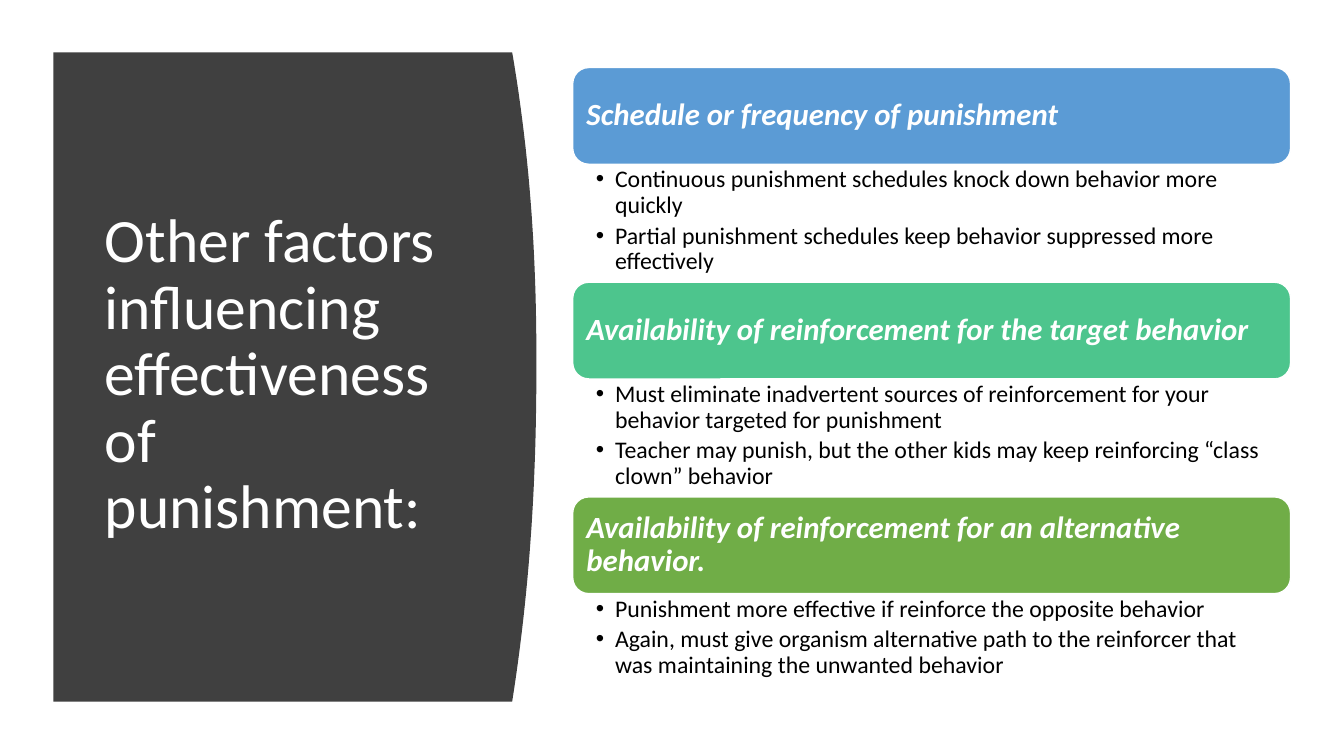
from pptx import Presentation
from pptx.dml.color import RGBColor
from pptx.enum.shapes import MSO_SHAPE as Shape
from pptx.enum.text import MSO_ANCHOR as Anchor, PP_ALIGN as Align
from pptx.oxml.ns import qn
from pptx.util import Inches, Pt
from lxml.etree import SubElement

TITLE = "Other factors influencing effectiveness of punishment:"
FACTORS = [
    ("Schedule or frequency of punishment", "5B9BD5", 1.17, [
        "Continuous punishment schedules knock down behavior more quickly",
        "Partial punishment schedules keep behavior suppressed more effectively",
    ]),
    ("Availability of reinforcement for the target behavior", "4DC58D", 1.17, [
        "Must eliminate inadvertent sources of reinforcement for your behavior targeted for punishment",
        "Teacher may punish, but the other kids may keep reinforcing “class clown” behavior",
    ]),
    ("Availability of reinforcement for an alternative behavior.", "70AD47", 0.92, [
        "Punishment more effective if reinforce the opposite behavior",
        "Again, must give organism alternative path to the reinforcer that was maintaining the unwanted behavior",
    ]),
]
FACTOR_LEFT, FACTOR_TOP, FACTOR_WIDTH, HEADING_HEIGHT = 5.68, 0.67, 7.12, 0.96
PANEL_LEFT, PANEL_TOP, PANEL_RIGHT, PANEL_BOTTOM = 0.53, 0.52, 5.08, 6.96
BULGE, APEX, CURVE_STEPS = 0.24, 3.6, 48


def color(hex_code):
    return RGBColor.from_string(hex_code)


def set_frame(frame, anchor, insets):
    frame.word_wrap = True
    frame.vertical_anchor = anchor
    (frame.margin_left, frame.margin_top,
     frame.margin_right, frame.margin_bottom) = map(Inches, insets)


def write(paragraph, text, size, hex_code, strong=False):
    paragraph.alignment = Align.LEFT
    paragraph.line_spacing = 0.9
    run = paragraph.add_run()
    run.text = text
    run.font.name = "Calibri"
    run.font.size = Pt(size)
    run.font.bold = run.font.italic = strong
    run.font.color.rgb = color(hex_code)


def add_bullet(paragraph):
    props = paragraph._p.get_or_add_pPr()
    props.set("marL", str(Inches(0.19)))
    props.set("indent", str(Inches(-0.19)))
    SubElement(props, qn("a:buFont")).set("typeface", "Arial")
    SubElement(props, qn("a:buChar")).set("char", "•")


def curve_point(step):
    y = PANEL_TOP + (PANEL_BOTTOM - PANEL_TOP) * step / CURVE_STEPS
    reach = APEX - PANEL_TOP if y < APEX else PANEL_BOTTOM - APEX
    return PANEL_RIGHT + BULGE * (1 - (abs(y - APEX) / reach) ** 2.2), y


def add_panel(slide):
    outline = [curve_point(step) for step in range(CURVE_STEPS + 1)]
    outline.append((PANEL_LEFT, PANEL_BOTTOM))
    builder = slide.shapes.build_freeform(
        Inches(PANEL_LEFT), Inches(PANEL_TOP))
    builder.add_line_segments([(Inches(x), Inches(y)) for x, y in outline])
    panel = builder.convert_to_shape()
    panel.shadow.inherit = False
    panel.fill.solid()
    panel.fill.fore_color.rgb = color("404040")
    panel.line.fill.background()

    title = slide.shapes.add_textbox(
        Inches(0.94), Inches(1.11), Inches(3.74), Inches(5.24)).text_frame
    set_frame(title, Anchor.MIDDLE, (0.1, 0.05, 0.1, 0.05))
    write(title.paragraphs[0], TITLE, 44, "FFFFFF")


def add_factor(slide, top, heading_text, fill, details_height, details_text):
    heading = slide.shapes.add_shape(
        Shape.ROUNDED_RECTANGLE, Inches(FACTOR_LEFT), Inches(top),
        Inches(FACTOR_WIDTH), Inches(HEADING_HEIGHT))
    heading.shadow.inherit = False
    heading.fill.solid()
    heading.fill.fore_color.rgb = color(fill)
    heading.line.color.rgb = color("FFFFFF")
    heading.line.width = Pt(1)
    set_frame(heading.text_frame, Anchor.MIDDLE, (0.09,) * 4)
    write(heading.text_frame.paragraphs[0], heading_text, 22, "FFFFFF", True)

    details = slide.shapes.add_textbox(
        Inches(FACTOR_LEFT), Inches(top + HEADING_HEIGHT),
        Inches(FACTOR_WIDTH), Inches(details_height)).text_frame
    set_frame(details, Anchor.TOP, (0.23, 0.03, 0.17, 0.03))
    for index, text in enumerate(details_text):
        paragraph = details.add_paragraph() if index else details.paragraphs[0]
        write(paragraph, text, 17, "000000")
        paragraph.space_after = Pt(3.4)
        add_bullet(paragraph)


def main():
    deck = Presentation()
    deck.slide_width, deck.slide_height = Inches(13.33), Inches(7.5)
    slide = deck.slides.add_slide(deck.slide_layouts[6])
    add_panel(slide)
    top = FACTOR_TOP
    for heading, fill, details_height, details in FACTORS:
        add_factor(slide, top, heading, fill, details_height, details)
        top += HEADING_HEIGHT + details_height
    deck.save("out.pptx")


if __name__ == "__main__":
    main()
